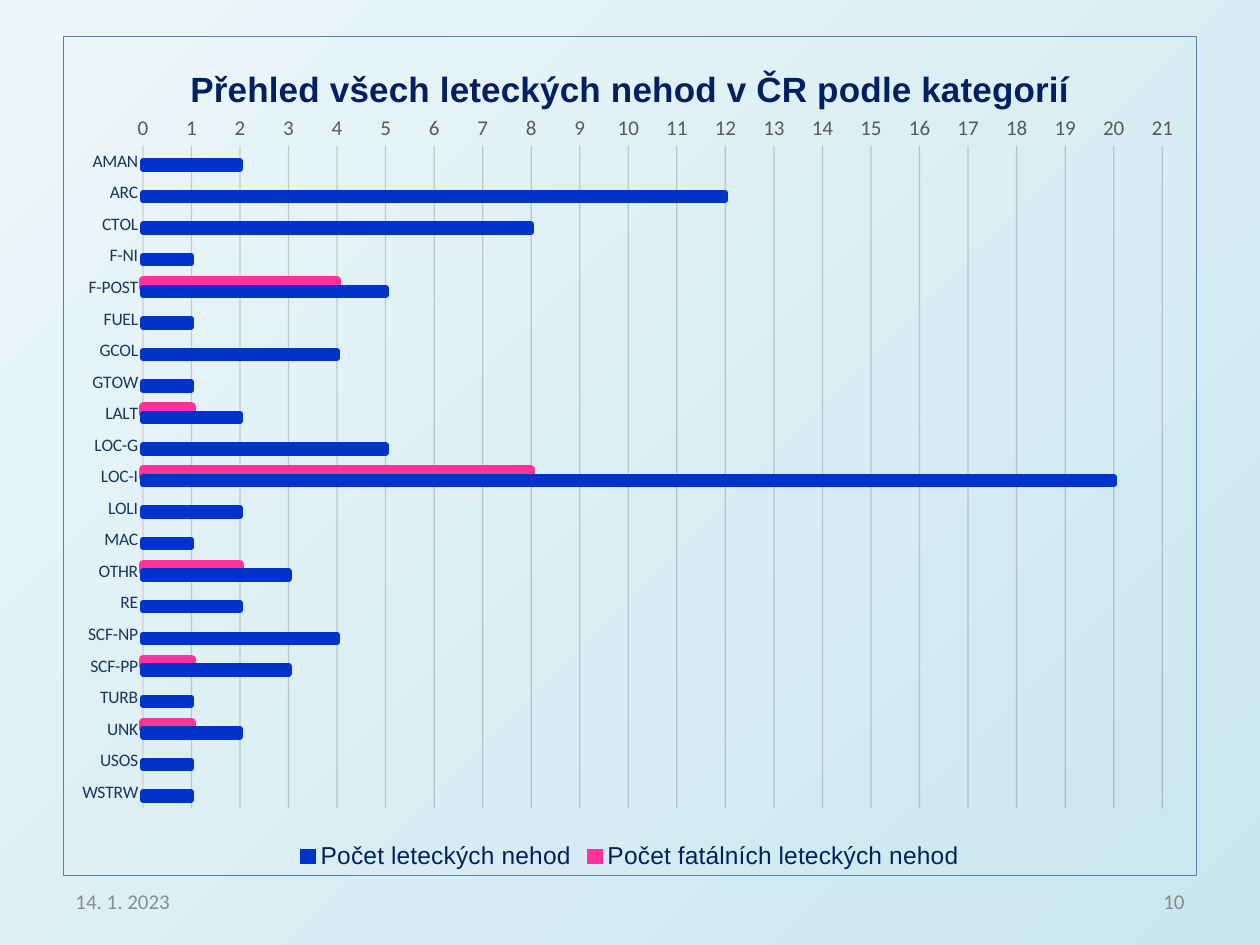
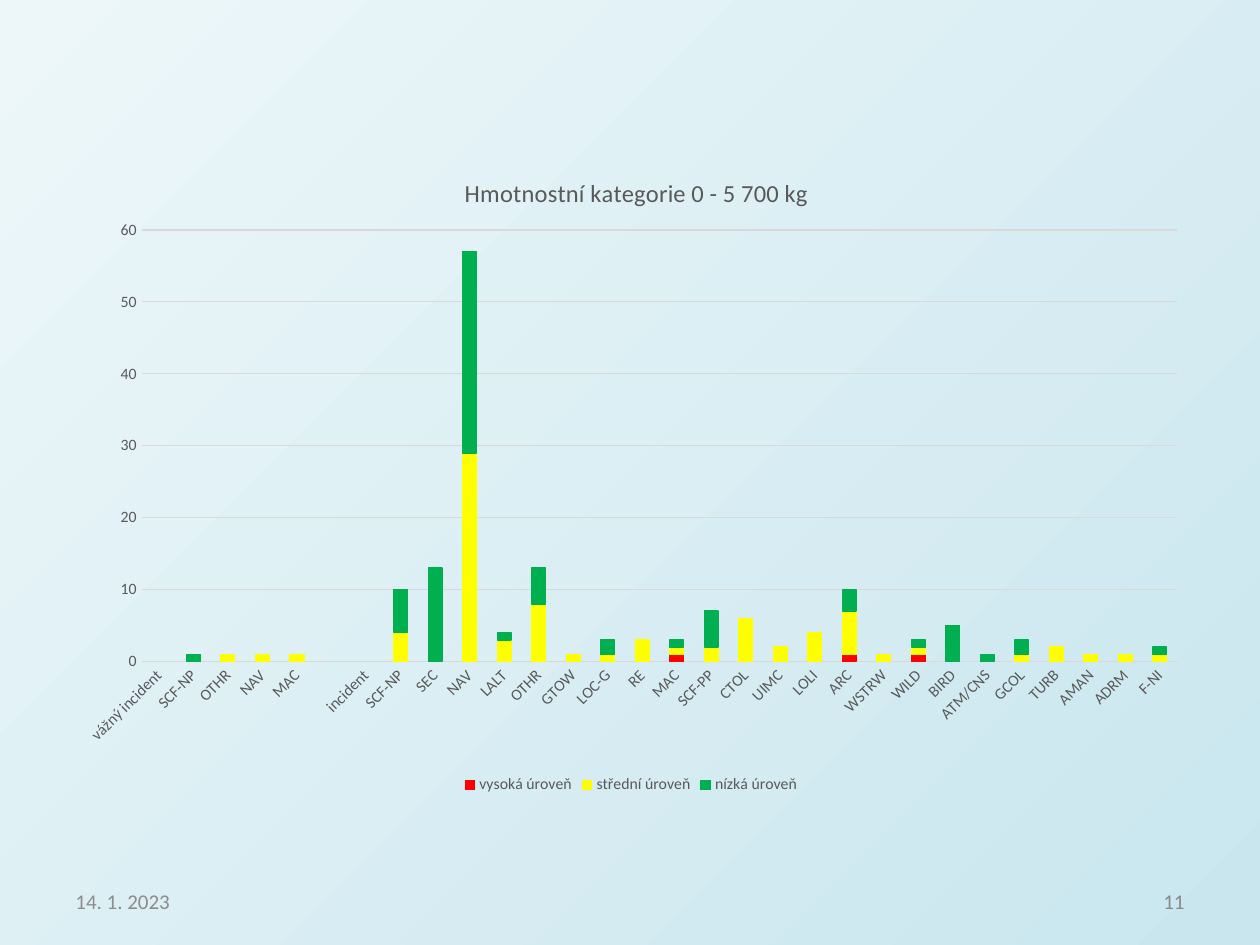
from pptx import Presentation
from pptx.chart.data import CategoryChartData
from pptx.dml.color import RGBColor
from pptx.enum.chart import XL_CHART_TYPE, XL_LEGEND_POSITION, XL_TICK_MARK
from pptx.enum.text import MSO_ANCHOR, PP_ALIGN
from pptx.oxml import parse_xml
from pptx.oxml.ns import nsdecls
from pptx.util import Pt

BAR = XL_CHART_TYPE.BAR_CLUSTERED
STACKED = XL_CHART_TYPE.COLUMN_STACKED
BOTTOM = XL_LEGEND_POSITION.BOTTOM
NO_TICK = XL_TICK_MARK.NONE
MIDDLE = MSO_ANCHOR.MIDDLE
LEFT, RIGHT = PP_ALIGN.LEFT, PP_ALIGN.RIGHT

# Shared look
PX_PER_INCH = 126
PAGE_WIDTH, PAGE_HEIGHT = 1260, 945
BACKGROUND = ("EDF7F9", "C9E6EE")
NAVY, LABEL_BLUE, GREY, PALE = "002060", "17375E", "595959", "D9D9D9"
FOOTER_TOP, FOOTER_HEIGHT, FOOTER_WIDTH = 876, 50, 294
DATE = "14. 1. 2023"

ACCIDENT_SERIES = [("Počet fatálních leteckých nehod", "FF3399", 4.75),
                   ("Počet leteckých nehod", "0033CC", 3.5)]
ACCIDENTS = [  # category, fatal, all
    ("AMAN", None, 2), ("ARC", None, 12), ("CTOL", None, 8),
    ("F-NI", None, 1), ("F-POST", 4, 5), ("FUEL", None, 1),
    ("GCOL", None, 4), ("GTOW", None, 1), ("LALT", 1, 2),
    ("LOC-G", None, 5), ("LOC-I", 8, 20), ("LOLI", None, 2),
    ("MAC", None, 1), ("OTHR", 2, 3), ("RE", None, 2),
    ("SCF-NP", None, 4), ("SCF-PP", 1, 3), ("TURB", None, 1),
    ("UNK", 1, 2), ("USOS", None, 1), ("WSTRW", None, 1),
]

LEVEL_SERIES = [("vysoká úroveň", "FF0000", 0.75),
                ("střední úroveň", "FFFF00", 0.75),
                ("nízká úroveň", "00B050", 0.75)]
INCIDENTS = [  # category, high, medium, low
    ("vážný incident", None, None, None), ("SCF-NP", None, None, 1),
    ("OTHR", None, 1, None), ("NAV", None, 1, None), ("MAC", None, 1, None),
    ("", None, None, None),
    ("incident", None, None, None), ("SCF-NP", None, 4, 6),
    ("SEC", None, None, 13), ("NAV", None, 29, 28), ("LALT", None, 3, 1),
    ("OTHR", None, 8, 5), ("GTOW", None, 1, None), ("LOC-G", None, 1, 2),
    ("RE", None, 3, None), ("MAC", 1, 1, 1), ("SCF-PP", None, 2, 5),
    ("CTOL", None, 6, None), ("UIMC", None, 2, None), ("LOLI", None, 4, None),
    ("ARC", 1, 6, 3), ("WSTRW", None, 1, None), ("WILD", 1, 1, 1),
    ("BIRD", None, None, 5), ("ATM/CNS", None, None, 1), ("GCOL", None, 1, 2),
    ("TURB", None, 2, None), ("AMAN", None, 1, None), ("ADRM", None, 1, None),
    ("F-NI", None, 1, 1),
]


def px(length):
    return round(length * 914400 / PX_PER_INCH)


def color(hex_code):
    return RGBColor.from_string(hex_code)


def style_font(font, size, hex_code, name="Calibri", bold=False):
    font.size, font.name, font.bold = Pt(size), name, bold
    font.color.rgb = color(hex_code)


def style_line(line, hex_code, width=0.75):
    line.color.rgb = color(hex_code)
    line.width = Pt(width)


def add_text(page, text, box, size=12, hex_code="8C8C8C", align=LEFT):
    frame = page.shapes.add_textbox(*map(px, box)).text_frame
    frame.word_wrap, frame.vertical_anchor = True, MIDDLE
    para = frame.paragraphs[0]
    para.alignment = align
    span = para.add_run()
    span.text = text
    style_font(span.font, size, hex_code)


def add_page(deck, number):
    page = deck.slides.add_slide(deck.slide_layouts[6])
    # Diagonal background, light at the top left
    fill = page.background.fill
    fill.gradient()
    fill.gradient_angle = 315
    for stop, hex_code in zip(fill.gradient_stops, BACKGROUND):
        stop.color.rgb = color(hex_code)
    # Footer
    add_text(page, DATE, (63, FOOTER_TOP, FOOTER_WIDTH, FOOTER_HEIGHT))
    add_text(page, str(number),
             (PAGE_WIDTH - 63 - FOOTER_WIDTH, FOOTER_TOP, FOOTER_WIDTH, FOOTER_HEIGHT),
             hex_code="898989", align=RIGHT)
    return page


def place(element, index, **parts):
    """Give a chart element a manual layout in fractions of the chart."""
    for old in element.xpath("c:layout"):
        element.remove(old)
    target = '<c:layoutTarget val="inner"/>' if "w" in parts else ""
    modes = "".join(f'<c:{key}Mode val="edge"/>' for key in "xy")
    values = "".join(f'<c:{key} val="{value}"/>' for key, value in parts.items())
    element.insert(index, parse_xml(
        f'<c:layout {nsdecls("c")}><c:manualLayout>{target}{modes}{values}'
        "</c:manualLayout></c:layout>"))


def clear_area(border=None):
    stroke = "<a:noFill/>"
    if border:
        stroke = f'<a:solidFill><a:srgbClr val="{border}"/></a:solidFill>'
    return parse_xml(f'<c:spPr {nsdecls("c", "a")}><a:noFill/>'
                     f'<a:ln w="9525">{stroke}</a:ln></c:spPr>')


def add_bars(page, box, kind, series, rows, title, plot_box, gap, border=None):
    """Add a bar or column chart with its title, legend and plain axes."""
    data = CategoryChartData()
    categories, *columns = zip(*rows)
    data.categories = categories
    for (name, _, _), values in zip(series, columns):
        data.add_series(name, values)
    chart = page.shapes.add_chart(kind, *map(px, box), data).chart
    style_font(chart.font, 10, "000000")

    # Transparent areas and plot position
    space = chart._chartSpace
    space.xpath("c:chart")[0].addnext(clear_area(border))
    plot_area = space.xpath("c:chart/c:plotArea")[0]
    plot_area.append(clear_area())
    place(plot_area, 0, **dict(zip("xywh", plot_box)))

    # Bars
    plot = chart.plots[0]
    plot.gap_width, plot.vary_by_categories = gap, False
    for bars, (_, hex_code, width) in zip(plot.series, series):
        bars.format.fill.solid()
        bars.format.fill.fore_color.rgb = color(hex_code)
        style_line(bars.format.line, hex_code, width)
        bars.format.line._ln.append(parse_xml(f'<a:round {nsdecls("a")}/>'))

    # Title and legend
    chart.has_title = True
    span = chart.chart_title.text_frame.paragraphs[0].add_run()
    span.text = title
    chart.has_legend = True
    chart.legend.position = BOTTOM
    chart.legend.include_in_layout = False

    # Axes
    for axis in (chart.category_axis, chart.value_axis):
        axis.major_tick_mark = axis.minor_tick_mark = NO_TICK
        axis.format.line.fill.background()
    chart.value_axis.has_major_gridlines = True
    chart.value_axis.minimum_scale = 0
    return chart, span


def accident_chart(page, box):
    chart, title = add_bars(
        page, box, BAR, ACCIDENT_SERIES, ACCIDENTS,
        "Přehled všech leteckých nehod v ČR podle kategorií",
        (0.07, 0.13, 0.9, 0.79), 230, border="4F81BD")
    style_font(title.font, 20, NAVY, "Arial", True)
    style_font(chart.legend.font, 14, NAVY, "Arial")
    category, value = chart.category_axis, chart.value_axis
    category.reverse_order = True
    style_font(category.tick_labels.font, 10, LABEL_BLUE)
    style_line(category.format.line, PALE)
    style_font(value.tick_labels.font, 12, GREY)
    value.maximum_scale, value.major_unit = 21, 1
    # Faint grid
    style_line(value.major_gridlines.format.line, "000000")
    shade = value._element.xpath("c:majorGridlines//a:srgbClr")[0]
    shade.append(parse_xml(f'<a:alpha {nsdecls("a")} val="17000"/>'))


def incident_chart(page, box):
    chart, title = add_bars(
        page, box, STACKED, LEVEL_SERIES, INCIDENTS,
        "Hmotnostní kategorie 0 - 5 700 kg", (0.07, 0.13, 0.91, 0.66), 150)
    chart.plots[0].overlap = 100
    style_font(title.font, 14, GREY)
    place(chart.chart_title._element, 1, x=0.35, y=0.04)
    category, value = chart.category_axis, chart.value_axis
    for item in (chart.legend, category.tick_labels, value.tick_labels):
        style_font(item.font, 9, GREY)
    # Slanted category labels
    category._element.xpath("c:txPr/a:bodyPr")[0].set("rot", "-2700000")
    value.maximum_scale, value.major_unit = 60, 10
    style_line(value.major_gridlines.format.line, PALE)


def main():
    deck = Presentation()
    deck.slide_width, deck.slide_height = px(PAGE_WIDTH), px(PAGE_HEIGHT)
    accident_chart(add_page(deck, 10), (63, 36, 1134, 840))
    incident_chart(add_page(deck, 11), (62, 145, 1138, 654))
    deck.save("out.pptx")


if __name__ == "__main__":
    main()
